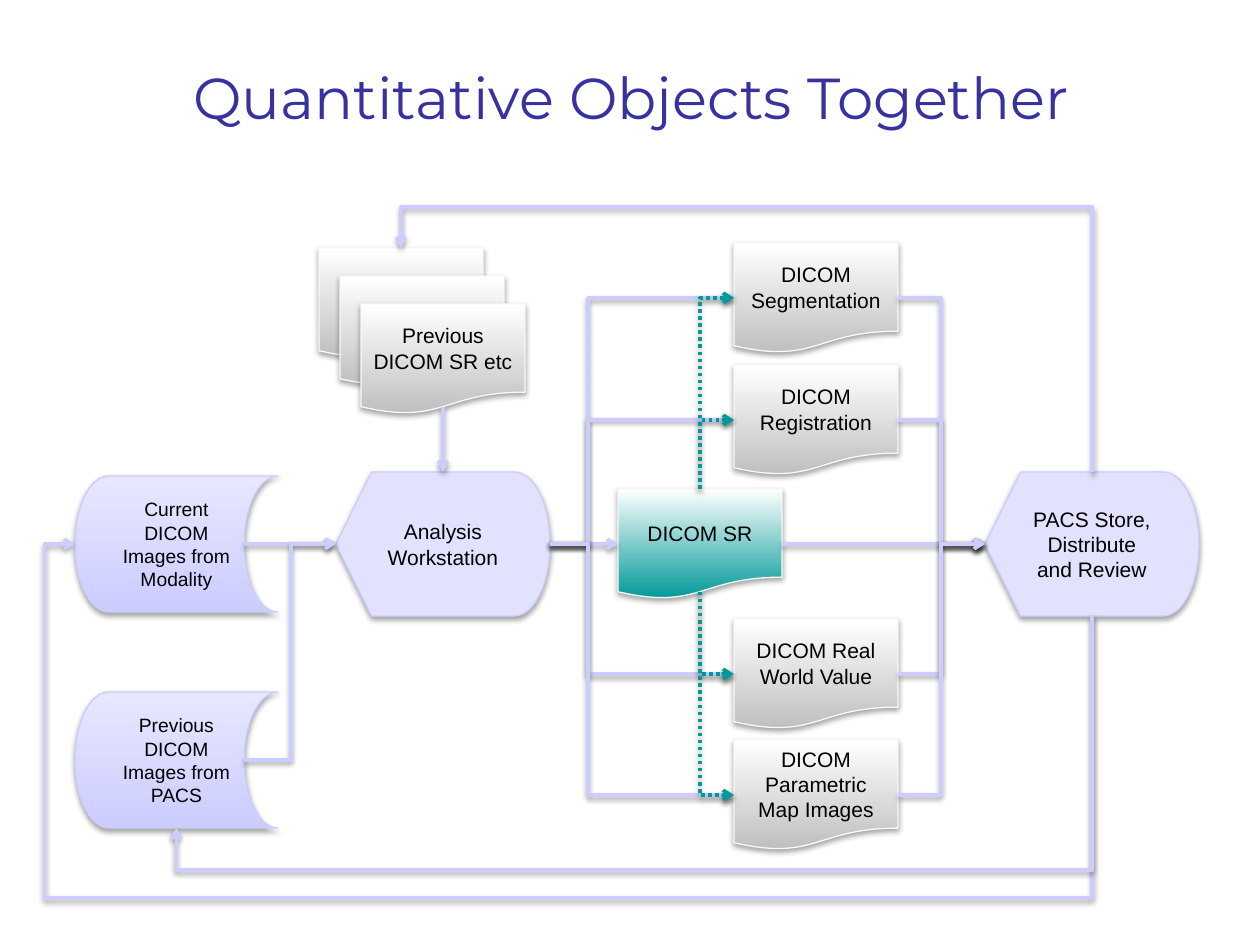
from lxml.etree import SubElement
from pptx import Presentation
from pptx.dml.color import RGBColor
from pptx.enum.dml import MSO_LINE_DASH_STYLE
from pptx.enum.shapes import MSO_CONNECTOR, MSO_SHAPE
from pptx.enum.text import MSO_ANCHOR, PP_ALIGN
from pptx.oxml.ns import qn
from pptx.util import Emu, Pt

SCALE = 914400 / 126
TOP, LEFT, BOTTOM, RIGHT = range(4)

INDIGO = RGBColor(0x37, 0x32, 0xA0)
LAVENDER = RGBColor(0xCC, 0xCC, 0xFF)
PALE_LAVENDER = RGBColor(0xE7, 0xE7, 0xFF)
MIST = RGBColor(0xE2, 0xE2, 0xFF)
TEAL = RGBColor(0x00, 0x99, 0x99)
SILVER = RGBColor(0xBF, 0xBF, 0xBF)
NEAR_WHITE = RGBColor(0xF9, 0xF9, 0xF9)
WHITE = RGBColor(0xFF, 0xFF, 0xFF)
BLACK = RGBColor(0x00, 0x00, 0x00)

DOCUMENT = dict(kind=MSO_SHAPE.FLOWCHART_DOCUMENT, size=(164, 110),
                fill=(SILVER, WHITE), outline=NEAR_WHITE, points=12)
REPORT = {**DOCUMENT, "fill": (TEAL, WHITE)}
STATION = dict(kind=MSO_SHAPE.FLOWCHART_DISPLAY, size=(214, 144),
               fill=(MIST,), outline=LAVENDER, points=12)
STORAGE = dict(kind=MSO_SHAPE.FLOWCHART_STORED_DATA, size=(203, 136),
               fill=(LAVENDER, PALE_LAVENDER), outline=LAVENDER, points=11)
STORAGE["kind"] = MSO_SHAPE.FLOWCHART_STORED_DATA
FLOW = dict(color=LAVENDER, width=Pt(2))
REFERENCE = dict(color=TEAL, width=Pt(2), dash_style=MSO_LINE_DASH_STYLE.ROUND_DOT)


def px(length):
    return Emu(round(length * SCALE))


def apply(target, values):
    for name, value in values.items():
        setattr(target, name, value)


def cast_shadow(part, distance, opacity):
    properties = part.element.spPr
    effects = properties.find(qn("a:effectLst"))
    if effects is None:
        effects = SubElement(properties, qn("a:effectLst"))
    shadow = SubElement(effects, qn("a:outerShdw"), blurRad="40000", dist=str(distance),
                        dir="5400000", rotWithShape="0")
    tone = SubElement(shadow, qn("a:srgbClr"), val="000000")
    SubElement(tone, qn("a:alpha"), val=str(opacity * 1000))


def write(frame, wording, font, anchor, margin):
    apply(frame, dict(word_wrap=True, vertical_anchor=anchor,
                      margin_left=margin, margin_right=margin))
    paragraph = frame.paragraphs[0]
    paragraph.alignment = PP_ALIGN.CENTER
    run = paragraph.add_run()
    run.text = wording
    color = font.pop("color")
    apply(run.font, font)
    run.font.color.rgb = color


def add_node(shapes, style, x, y, wording=""):
    node = shapes.add_shape(style["kind"], px(x), px(y), *map(px, style["size"]))
    node.shadow.inherit = False
    cast_shadow(node, 23000, 35)
    if len(style["fill"]) == 1:
        node.fill.solid()
        node.fill.fore_color.rgb = style["fill"][0]
    else:
        node.fill.gradient()
        node.fill.gradient_angle = 90
        for stop, color in zip(node.fill.gradient_stops, style["fill"]):
            stop.color.rgb = color
    node.line.color.rgb = style["outline"]
    node.line.width = Pt(0.75)
    if wording:
        font = dict(name="Arial", size=Pt(style["points"]), color=BLACK)
        write(node.text_frame, wording, font, MSO_ANCHOR.MIDDLE, px(10))
    return node


def anchor_point(node, side):
    right, bottom = node.width, node.height
    if node.auto_shape_type == MSO_SHAPE.FLOWCHART_STORED_DATA:
        right = right * 5 / 6
    if node.auto_shape_type == MSO_SHAPE.FLOWCHART_DOCUMENT:
        bottom = bottom * 0.934
    x = {LEFT: 0, RIGHT: right}.get(side, node.width / 2)
    y = {TOP: 0, BOTTOM: bottom}.get(side, node.height / 2)
    return node.left + x, node.top + y


def link(shapes, start, start_side, end, end_side, bends=None, style=FLOW):
    straight = bends is None
    kind = MSO_CONNECTOR.STRAIGHT if straight else MSO_CONNECTOR.ELBOW
    connector = shapes.add_connector(kind, 0, 0, 0, 0)
    connector.begin_connect(start, start_side)
    connector.end_connect(end, end_side)
    (x1, y1), (x2, y2) = anchor_point(start, start_side), anchor_point(end, end_side)
    frame = (x1, y1, x2, y2)
    properties = connector.element.spPr
    if not straight:
        upright = start_side in (TOP, BOTTOM)
        spans = [(x1, x2), (y1, y2)]
        if upright:
            spans.reverse()
            cx, cy = (x1 + x2) / 2, (y1 + y2) / 2
            frame = (cx + y1 - cy, cy - x1 + cx, cx + y2 - cy, cy - x2 + cx)
            properties.find(qn("a:xfrm")).set("rot", "5400000")
        geometry = properties.find(qn("a:prstGeom"))
        geometry.set("prst", f"bentConnector{len(bends) + 2}")
        guides = geometry.find(qn("a:avLst"))
        for index, (bend, (first, last)) in enumerate(zip(bends, spans), 1):
            ratio = round((px(bend) - first) / (last - first) * 100000)
            SubElement(guides, qn("a:gd"), name=f"adj{index}", fmla=f"val {ratio}")
    apply(connector, dict(zip(("begin_x", "begin_y", "end_x", "end_y"), map(round, frame))))
    line_format = dict(style)
    connector.line.color.rgb = line_format.pop("color")
    apply(connector.line, line_format)
    SubElement(connector.line._get_or_add_ln(), qn("a:tailEnd"), type="arrow")
    cast_shadow(connector, 20000, 38)


def add_title(shapes, x, y, width, height):
    title = shapes.add_textbox(px(x), px(y), px(width), px(height))
    font = dict(name="Montserrat", size=Pt(33), color=INDIGO)
    write(title.text_frame, "Quantitative Objects Together", font, MSO_ANCHOR.BOTTOM, px(12))


def add_image_sources(shapes, x, y):
    wordings = ("Current DICOM Images from Modality", "Previous DICOM Images from PACS")
    return [add_node(shapes, STORAGE, x, y + 216 * row, wording)
            for row, wording in enumerate(wordings)]


def add_previous_reports(shapes, x, y):
    stack = shapes.add_group_shape().shapes
    return [add_node(stack, DOCUMENT, x + 21 * layer, y + 28 * layer, wording)
            for layer, wording in enumerate(("", "", "Previous DICOM SR etc"))]


def add_results(shapes, x, y):
    rows = {0: "DICOM Segmentation", 122: "DICOM Registration",
            376: "DICOM Real World Value", 497: "DICOM Parametric Map Images"}
    report = add_node(shapes, REPORT, x, y + 246, "DICOM SR")
    return report, [add_node(shapes, DOCUMENT, x + 116, y + offset, wording)
                    for offset, wording in rows.items()]


def connect_inputs(shapes, sources, previous, workstation):
    current, archived = sources
    link(shapes, current, RIGHT, workstation, LEFT)
    link(shapes, archived, RIGHT, workstation, LEFT, (291,))
    link(shapes, previous[-1], BOTTOM, workstation, TOP)


def connect_results(shapes, workstation, report, results, store):
    link(shapes, workstation, RIGHT, report, LEFT)
    link(shapes, report, RIGHT, store, LEFT)
    for result in results:
        link(shapes, workstation, RIGHT, result, LEFT, (588,))
        link(shapes, result, RIGHT, store, LEFT, (941,))
    for result in results:
        side = TOP if result.top < report.top else BOTTOM
        link(shapes, report, side, result, LEFT, (), REFERENCE)


def connect_feedback(shapes, store, sources, previous):
    current, archived = sources
    link(shapes, store, BOTTOM, current, LEFT, (898, 44))
    link(shapes, store, BOTTOM, archived, BOTTOM, (870,))
    link(shapes, store, TOP, previous[0], TOP, (207,))


def main():
    deck = Presentation()
    deck.slide_width, deck.slide_height = px(1260), px(945)
    shapes = deck.slides.add_slide(deck.slide_layouts[6]).shapes
    add_title(shapes, 131, 40, 1000, 97)
    sources = add_image_sources(shapes, 75, 476)
    workstation = add_node(shapes, STATION, 336, 472, "Analysis Workstation")
    report, results = add_results(shapes, 618, 243)
    store = add_node(shapes, STATION, 985, 472, "PACS Store, Distribute and Review")
    previous = add_previous_reports(shapes, 319, 248)
    connect_feedback(shapes, store, sources, previous)
    connect_inputs(shapes, sources, previous, workstation)
    connect_results(shapes, workstation, report, results, store)
    deck.save("out.pptx")


if __name__ == "__main__":
    main()
